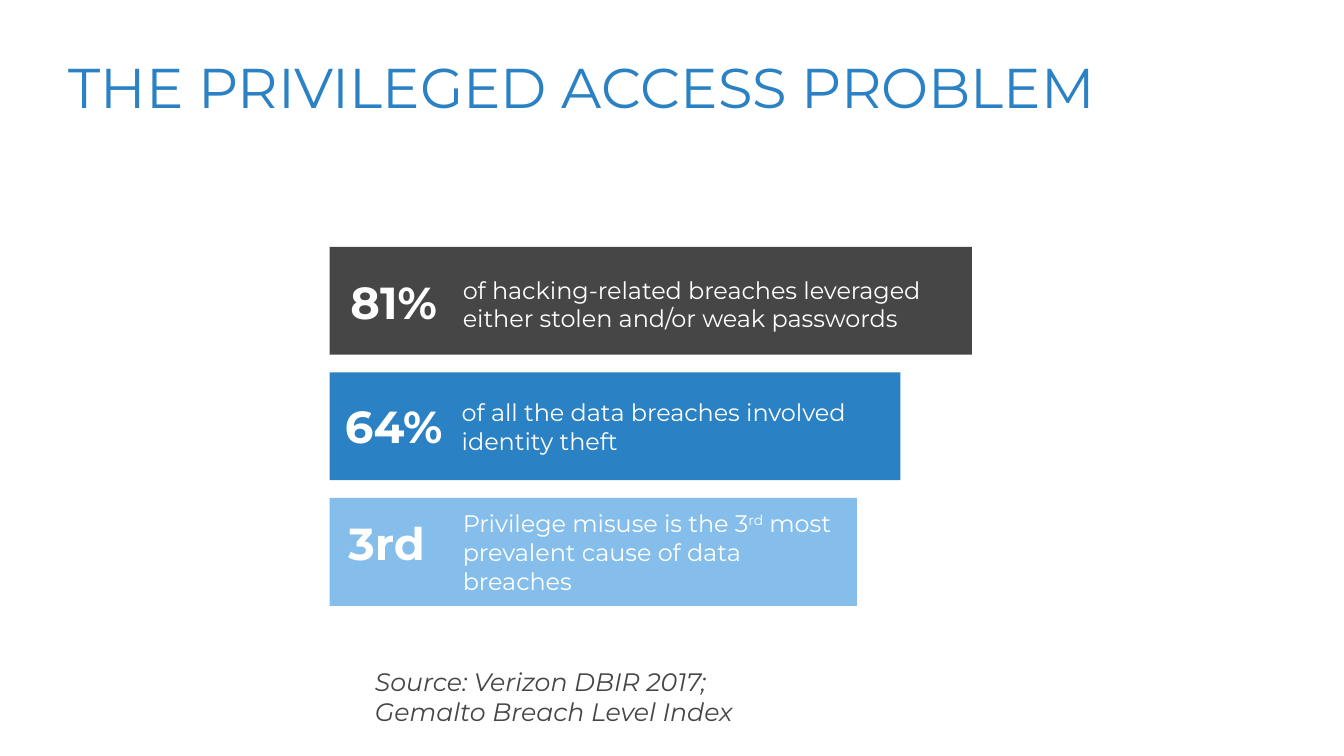
from collections import namedtuple

from pptx import Presentation
from pptx.dml.color import RGBColor
from pptx.enum.shapes import MSO_SHAPE as Shape
from pptx.enum.text import MSO_ANCHOR as Anchor, MSO_AUTO_SIZE as AutoSize, PP_ALIGN as Align
from pptx.util import Inches, Pt

WHITE = RGBColor(0xFF, 0xFF, 0xFF)
GREY = RGBColor(0x46, 0x46, 0x46)
BLUE = RGBColor(0x2A, 0x81, 0xC4)
SKY = RGBColor(0x85, 0xBE, 0xEB)

TITLE = {"size": Pt(40), "color": BLUE}
FIGURE = {"size": Pt(32), "color": WHITE, "bold": True}
CLAIM = {"size": Pt(17.1), "color": WHITE}
SOURCE = {"size": Pt(18), "color": GREY, "italic": True}

Box = namedtuple("Box", "left top width height")
Fact = namedtuple("Fact", "figure claim fill width figure_shift claim_shift claim_width")

FACTS = [
    Fact("81%", [("of hacking-related breaches leveraged either stolen and/or weak passwords", 0)],
         GREY, 6.37, (0.03, 0.01), (1.25, 0.14), 4.9),
    Fact("64%", [("of all the data breaches involved identity theft", 0)],
         BLUE, 5.66, (0.03, -0.01), (1.24, 0.11), 4.34),
    Fact("3rd", [("Privilege misuse is the 3", 0), ("rd", 30000),
                 (" most prevalent cause of data breaches", 0)],
         SKY, 5.23, (-0.04, -0.09), (1.25, 0.11), 3.9),
]


def write(para, text, style, baseline=0):
    """Add one styled run to a paragraph."""
    span = para.add_run()
    span.text = text
    span.font.name = "Montserrat"
    for name, value in style.items():
        if name == "color":
            span.font.color.rgb = value
        else:
            setattr(span.font, name, value)
    if baseline:
        span.font._element.set("baseline", str(baseline))


def add_text_frame(page, box, settings):
    """Add a text box and return its frame with the settings applied."""
    frame = page.shapes.add_textbox(*map(Inches, box)).text_frame
    for name, value in settings.items():
        setattr(frame, name, value)
    return frame


def add_title(page, box, text):
    """Place the title placeholder in the box."""
    title = page.shapes.title
    for name, value in box._asdict().items():
        setattr(title, name, Inches(value))
    frame = title.text_frame
    frame.auto_size = AutoSize.NONE
    frame.vertical_anchor = Anchor.TOP
    para = frame.paragraphs[0]
    para.alignment = Align.LEFT
    para.line_spacing = 0.9
    write(para, text, TITLE)


def add_fact(page, box, fact):
    """Draw one coloured bar with its figure and its claim."""
    bar = page.shapes.add_shape(Shape.RECTANGLE, *map(Inches, box))
    bar.shadow.inherit = False
    bar.fill.solid()
    bar.fill.fore_color.rgb = fact.fill
    bar.line.fill.background()

    def settings(side, wrap):
        """Return the frame settings for a side inset."""
        return {"word_wrap": wrap, "vertical_anchor": Anchor.MIDDLE,
                "margin_left": Inches(side), "margin_right": Inches(side),
                "margin_top": Inches(0.04), "margin_bottom": Inches(0.04)}

    right, down = fact.claim_shift
    claim_box = Box(box.left + right, box.top + down, fact.claim_width, 0.85)
    para = add_text_frame(page, claim_box, settings(0.07, True)).paragraphs[0]
    for text, baseline in fact.claim:
        write(para, text, CLAIM, baseline)

    right, down = fact.figure_shift
    figure_box = Box(box.left + right, box.top + down, 1.21, box.height)
    para = add_text_frame(page, figure_box, settings(0, False)).paragraphs[0]
    para.alignment = Align.CENTER
    write(para, fact.figure, FIGURE)


def add_facts(page, box, facts):
    """Stack the bars evenly down the box."""
    height = 1.07
    pitch = (box.height - height) / (len(facts) - 1)
    for row, fact in enumerate(facts):
        add_fact(page, Box(box.left, box.top + row * pitch, fact.width, height), fact)


def add_source(page, box, lines):
    """Write the source note, one paragraph per line."""
    frame = add_text_frame(page, box, {"word_wrap": True, "auto_size": AutoSize.SHAPE_TO_FIT_TEXT})
    for row, line in enumerate(lines):
        para = frame.add_paragraph() if row else frame.paragraphs[0]
        write(para, line, SOURCE)


def main():
    """Build the slide and save the deck."""
    deck = Presentation()
    deck.slide_width, deck.slide_height = Inches(13.33), Inches(7.5)
    page = deck.slides.add_slide(deck.slide_layouts.get_by_name("Title Only"))
    add_title(page, Box(0.58, 0.55, 11.53, 1.31), "THE PRIVILEGED ACCESS PROBLEM")
    add_facts(page, Box(3.27, 2.45, 6.37, 3.56), FACTS)
    add_source(page, Box(3.62, 6.56, 4.96, 0.71),
               ["Source: Verizon DBIR 2017;", "Gemalto Breach Level Index"])
    deck.save("out.pptx")


if __name__ == "__main__":
    main()
